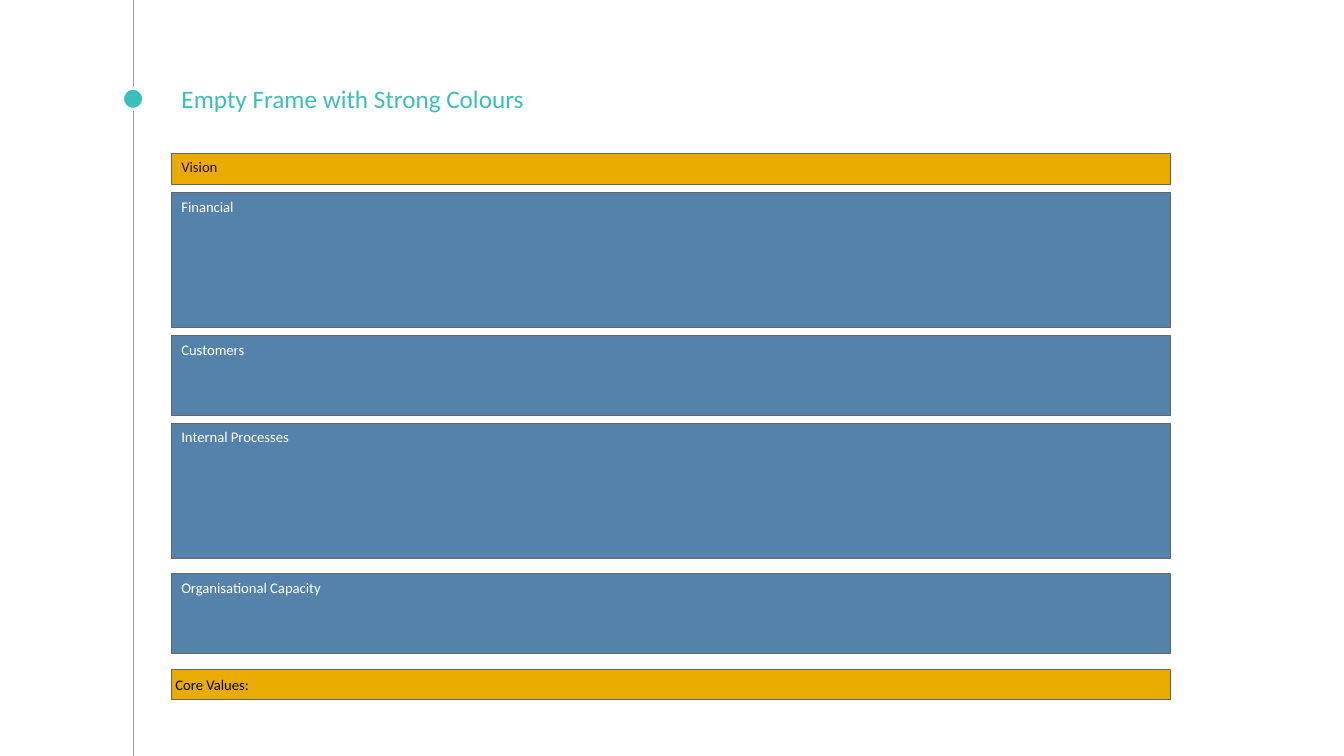
from lxml.etree import SubElement
from pptx import Presentation
from pptx.dml.color import RGBColor
from pptx.enum.shapes import MSO_CONNECTOR, MSO_SHAPE
from pptx.enum.text import MSO_ANCHOR, PP_ALIGN
from pptx.oxml.ns import qn
from pptx.util import Inches, Pt

TEAL = RGBColor(0x39, 0xC0, 0xBA)
BLUE = RGBColor(0x54, 0x82, 0xAB)
AMBER = RGBColor(0xEA, 0xAB, 0x00)
GREY = RGBColor(0x66, 0x66, 0x66)
RAIL_GREY = RGBColor(0x99, 0x9F, 0xA9)
WHITE = RGBColor(0xFF, 0xFF, 0xFF)
BROWN = RGBColor(0x26, 0x0D, 0x0D)
BLACK = RGBColor(0x00, 0x00, 0x00)

# Content
HEADING = "Empty Frame with Strong Colours"
TALL, SHORT = 1.34, 0.79
PERSPECTIVES = [  # label, top, height
    ("Financial", 1.91, TALL),
    ("Customers", 3.33, SHORT),
    ("Internal Processes", 4.2, TALL),
    ("Organisational Capacity", 5.69, SHORT),
]
VISION = ("Vision", 1.52, 0.31)
CORE_VALUES = ("Core Values:", 6.64, 0.3)

# Layout
FRAME_LEFT, FRAME_WIDTH = 1.7, 9.91
RAIL_X, DOT_SIZE, DOT_MIDDLE = 1.32, 0.21, 0.98


def write(target, text, size=10.5, color=WHITE, anchor=MSO_ANCHOR.TOP,
          inset=(0.1, 0.05)):
    frame = target.text_frame
    frame.word_wrap = True
    frame.vertical_anchor = anchor
    frame.margin_left = frame.margin_right = Inches(inset[0])
    frame.margin_top = frame.margin_bottom = Inches(inset[1])
    paragraph = frame.paragraphs[0]
    paragraph.alignment = PP_ALIGN.LEFT
    run = paragraph.add_run()
    run.text = text
    run.font.name = "Calibri"
    run.font.size = Pt(size)
    run.font.color.rgb = color


def add_filled(slide, kind, left, top, width, height, fill, line, weight):
    shape = slide.shapes.add_shape(kind, Inches(left), Inches(top),
                                   Inches(width), Inches(height))
    shape.shadow.inherit = False
    shape.fill.solid()
    shape.fill.fore_color.rgb = fill
    shape.line.color.rgb = line
    shape.line.width = Pt(weight)
    return shape


def add_band(slide, band, fill, weight, kind=MSO_SHAPE.RECTANGLE, **text_format):
    label, top, height = band
    shape = add_filled(slide, kind, FRAME_LEFT, top, FRAME_WIDTH, height,
                       fill, GREY, weight)
    write(shape, label, **text_format)
    return shape


def main():
    deck = Presentation()
    deck.slide_width, deck.slide_height = Inches(13.33), Inches(7.5)
    slide = deck.slides.add_slide(deck.slide_layouts[5])

    # Rail and dot
    rail = slide.shapes.add_connector(MSO_CONNECTOR.STRAIGHT, Inches(RAIL_X), 0,
                                      Inches(RAIL_X), deck.slide_height)
    rail.line.color.rgb = RAIL_GREY
    rail.line.width = Pt(0.75)
    SubElement(rail.line._get_or_add_ln().getparent(), qn("a:effectLst"))
    add_filled(slide, MSO_SHAPE.OVAL, RAIL_X - DOT_SIZE / 2,
               DOT_MIDDLE - DOT_SIZE / 2, DOT_SIZE, DOT_SIZE, TEAL, WHITE, 2.25)

    # Title
    title = slide.shapes.title
    title.left, title.top = Inches(FRAME_LEFT), Inches(0.73)
    title.width, title.height = Inches(10), Inches(0.5)
    write(title, HEADING, size=18, color=TEAL, anchor=MSO_ANCHOR.BOTTOM,
          inset=(0.1, 0.1))

    # Perspectives between the vision and the core values
    for perspective in PERSPECTIVES:
        add_band(slide, perspective, BLUE, 0.25)
    add_band(slide, VISION, AMBER, 0.5, color=BROWN)
    core_values = add_band(slide, CORE_VALUES, AMBER, 1,
                           kind=MSO_SHAPE.ROUNDED_RECTANGLE, color=BLACK,
                           anchor=MSO_ANCHOR.MIDDLE, inset=(0.04, 0))
    core_values.adjustments[0] = 0

    deck.save("out.pptx")


if __name__ == "__main__":
    main()
